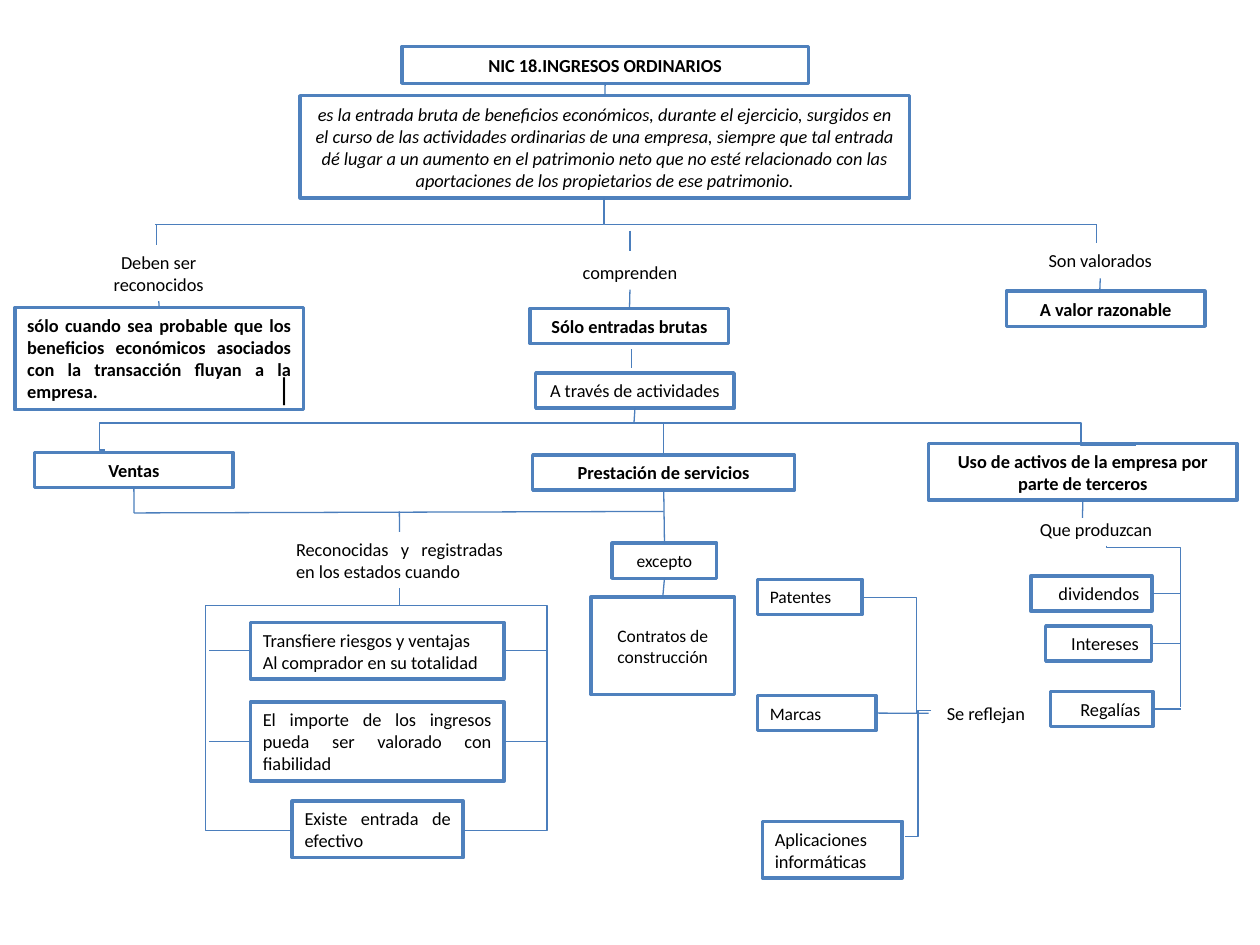
from lxml import etree
from pptx import Presentation
from pptx.dml.color import RGBColor
from pptx.enum.shapes import MSO_CONNECTOR, MSO_SHAPE
from pptx.enum.text import MSO_ANCHOR, MSO_AUTO_SIZE, PP_ALIGN
from pptx.oxml.ns import qn
from pptx.util import Cm, Pt

RECT = MSO_SHAPE.RECTANGLE
STRAIGHT, ELBOW = MSO_CONNECTOR.STRAIGHT, MSO_CONNECTOR.ELBOW
MIDDLE, FIXED = MSO_ANCHOR.MIDDLE, MSO_AUTO_SIZE.NONE
LEFT, MID, RIGHT, JUST = (PP_ALIGN.LEFT, PP_ALIGN.CENTER,
                          PP_ALIGN.RIGHT, PP_ALIGN.JUSTIFY)
TOP, WEST, BASE, EAST = range(4)

COLORS = {"fill": "FFFFFF", "edge": "4F81BD", "link": "4B7EBC", "text": "000000"}
FONT = "Calibri"
ROW, PAIR = 0.71, 1.14  # heights of one and two lines of text, in cm
RAILS = {"west": 4.22, "east": 11.0, "gains": 23.8}

# Framed boxes: name, place in cm, text, format
BOXES = [
    ("define", (6.05, 1.93, 12.29, 2.06),
     "es la entrada bruta de beneficios económicos, durante el ejercicio, "
     "surgidos en el curso de las actividades ordinarias de una empresa, "
     "siempre que tal entrada dé lugar a un aumento en el patrimonio neto que "
     "no esté relacionado con las aportaciones de los propietarios de ese "
     "patrimonio.", {"italic": True}),
    ("likely", (0.3, 6.2, 5.82, 2.06),
     "sólo cuando sea probable que los beneficios económicos asociados con la "
     "transacción fluyan a la empresa.", {"bold": True, "align": JUST}),
    ("fair", (20.29, 5.87, 4, ROW), "A valor razonable", {"bold": True}),
    ("gross", (10.69, 6.22, 4, ROW), "Sólo entradas brutas", {"bold": True}),
    ("through", (10.8, 7.52, 4, ROW), "A través de actividades", {}),
    ("sales", (0.7, 9.12, 4, ROW), "Ventas", {"bold": True}),
    ("service", (10.74, 9.17, 5.28, ROW), "Prestación de servicios",
     {"bold": True}),
    ("assets", (18.72, 8.94, 6.22, PAIR),
     "Uso de activos de la empresa por parte de terceros", {"bold": True}),
    ("risk", (5.05, 12.55, 5.11, PAIR),
     "Transfiere riesgos y ventajas\nAl comprador en su totalidad",
     {"align": JUST}),
    ("amount", (5.05, 14.15, 5.11, 1.6),
     "El importe de los ingresos pueda ser valorado con fiabilidad",
     {"align": JUST}),
    ("cash", (5.89, 16.15, 3.45, PAIR), "Existe entrada de efectivo",
     {"align": JUST}),
    ("shares", (20.78, 11.61, 2.44, ROW), "dividendos", {"align": RIGHT}),
    ("interest", (21.08, 12.62, 2.13, ROW), "Intereses", {"align": RIGHT}),
    ("royalty", (21.18, 13.94, 2.06, ROW), "Regalías", {"align": RIGHT}),
    ("patent", (15.27, 11.68, 2.11, ROW), "Patentes",
     {"size": 10, "align": JUST}),
    ("brand", (15.27, 14.02, 2.39, ROW), "Marcas",
     {"size": 10, "align": JUST}),
    ("apps", (15.37, 16.56, 2.82, PAIR), "Aplicaciones informáticas",
     {"align": JUST}),
    ("except", (12.34, 10.95, 2.11, ROW), "excepto", {"size": 10}),
    ("build", (11.91, 12.04, 2.9, 1.96), "Contratos de construcción",
     {"size": 10}),
]

# Linking words without a frame
LABELS = [
    ("must", (1.7, 4.93, 3, PAIR), "Deben ser reconocidos", {}),
    ("bar", (5.33, 7.32, 1.57, 1.02), "|", {"size": 18, "align": LEFT}),
    ("valued", (20.68, 4.9, 3, ROW), "Son valorados", {}),
    ("include", (11.2, 5.13, 3, ROW), "comprenden", {}),
    ("record", (5.72, 10.72, 4.67, PAIR),
     "Reconocidas y registradas en los estados cuando", {"align": JUST}),
    ("yield", (19.76, 10.31, 4.67, ROW), "Que produzcan", {}),
    ("reflect", (18.72, 14.02, 2.31, ROW), "Se reflejan", {}),
]

# Straight links: each end is a (name, side) pair or an (x, y) point in cm
LINKS = [
    (("title", BASE), ("define", TOP)),
    ((3.15, 4.52), (3.15, 4.93)),
    ((22.1, 4.52), (22.1, 4.9)),
    ((12.7, 4.65), (12.7, 5.05)),
    (("valued", BASE), (22.17, 5.87)),
    (("must", BASE), ("likely", TOP)),
    (("include", BASE), ("gross", TOP)),
    ((12.73, 7.04), (12.73, 7.42)),
    (("through", BASE), (12.78, 8.53)),
    ((13.38, 8.53), ("service", TOP)),
    (("sales", BASE), (2.7, 10.34)),
    ((2.7, 10.34), (13.38, 10.31)),
    (("service", BASE), ("except", TOP)),
    (("except", BASE), ("build", TOP)),
    ((8.05, 10.31), ("record", TOP)),
    (("assets", BASE), (21.82, 10.44)),
    (("brand", EAST), (18.72, 14.38)),
]

# Elbow links: visible area in cm, number of legs, turn, flip, bends
ELBOWS = [
    ((3.12, 3.99, 9.05, 0.53), 2, 90, None, ()),
    ((12.19, 3.99, 9.91, 0.53), 2, 270, "flipH", ()),
    ((2.11, 8.53, 10.67, 0.54), 3, 180, "flipV", (1.01,)),
    ((12.78, 8.53, 10.13, 0.45), 3, 0, None, (0.89,)),
    ((8.05, 11.86, 1.29, 4.88), 4, 270, "flipH", (0.07, 2.31)),
    ((5.89, 11.86, 2.16, 4.88), 4, 90, None, (0.07, 1.81)),
    ((22.3, 11.0, 1.5, 3.25), 3, 270, "flipH", (0.01,)),
    ((17.38, 12.04, 1.09, 2.34), 2, 0, None, ()),
    ((18.24, 14.33, 0.53, 2.54), 3, 180, "flipV", (0.5,)),
]


def paint(name):
    return RGBColor.from_string(COLORS[name])


def write(shape, text, size=10.5, bold=False, italic=False, align=MID):
    frame = shape.text_frame
    frame.text = text
    frame.word_wrap = True
    frame.auto_size = FIXED
    frame.vertical_anchor = MIDDLE
    for para in frame.paragraphs:
        para.alignment = align
        font = para.runs[0].font
        font.name, font.size = FONT, Pt(size)
        font.bold, font.italic = bold, italic
        font.color.rgb = paint("text")


def edge(shape):
    shape.shadow.inherit = False
    shape.fill.solid()
    shape.fill.fore_color.rgb = paint("fill")
    shape.line.color.rgb = paint("edge")
    shape.line.width = Pt(2)


def head(slide):
    title = slide.shapes.title
    title.left, title.top = Cm(8.1), Cm(0.94)
    title.width, title.height = Cm(8.2), Cm(0.74)
    edge(title)
    write(title, "NIC 18.INGRESOS ORDINARIOS", bold=True)
    return title


def box(slide, place, text, form):
    shape = slide.shapes.add_shape(RECT, *map(Cm, place))
    edge(shape)
    write(shape, text, **form)
    return shape


def label(slide, place, text, form):
    shape = slide.shapes.add_textbox(*map(Cm, place))
    write(shape, text, **form)
    return shape


def wire(slide, kind, start, end):
    link = slide.shapes.add_connector(kind, *map(Cm, start + end))
    link.line.color.rgb = paint("link")
    link.line.width = Pt(0.75)
    etree.SubElement(link._element.spPr, qn("a:effectLst"))
    return link


def join(slide, parts, start, end):
    ends = [(0, 0) if isinstance(e[0], str) else e for e in (start, end)]
    link = wire(slide, STRAIGHT, *ends)
    for spot, hook in ((start, link.begin_connect), (end, link.end_connect)):
        if isinstance(spot[0], str):
            hook(parts[spot[0]], spot[1])


def bend(slide, area, legs, turn, flip, bends):
    x, y, w, h = area
    if turn in (90, 270):  # the frame is stored before it is turned
        x, y, w, h = x + (w - h) / 2, y + (h - w) / 2, h, w
    link = wire(slide, ELBOW, (x, y), (x + w, y + h))
    frame = link._element.spPr.find(qn("a:xfrm"))
    frame.set("rot", str(turn * 60000))
    if flip:
        frame.set(flip, "1")
    geom = link._element.spPr.find(qn("a:prstGeom"))
    geom.set("prst", f"bentConnector{legs}")
    for i, value in enumerate(bends, 1):
        etree.SubElement(geom.find(qn("a:avLst")), qn("a:gd"), name=f"adj{i}",
                         fmla=f"val {round(value * 100000)}")


def main():
    deck = Presentation()
    deck.slide_width, deck.slide_height = Cm(25.4), Cm(19.05)
    slide = deck.slides.add_slide(deck.slide_layouts[5])

    # Title, boxes and labels
    parts = {"title": head(slide)}
    for make, rows in ((box, BOXES), (label, LABELS)):
        for name, *row in rows:
            parts[name] = make(slide, *row)

    # Links
    for start, end in LINKS:
        join(slide, parts, start, end)
    for row in ELBOWS:
        bend(slide, *row)

    # Branches from the lists to their rails
    sides = [(n, s, r) for n in ("risk", "amount")
             for s, r in ((WEST, "west"), (EAST, "east"))]
    sides += [(n, EAST, "gains") for n in ("shares", "interest", "royalty")]
    for name, side, rail in sides:
        part = parts[name]
        level = (part.top + part.height / 2) / Cm(1)
        join(slide, parts, (name, side), (RAILS[rail], level))

    deck.save("out.pptx")


if __name__ == "__main__":
    main()
